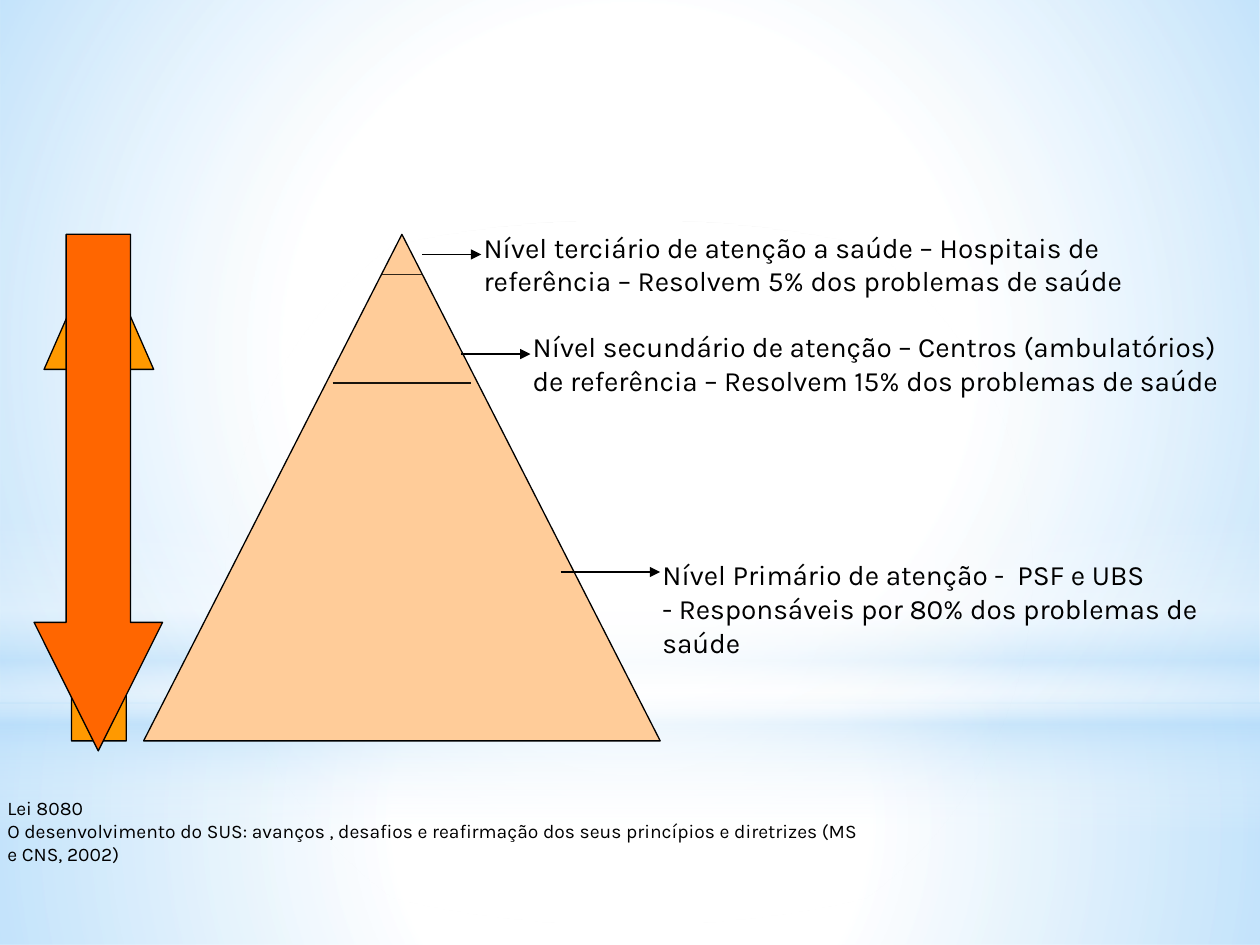
"""Build a slide on the three levels of care in the SUS health pyramid."""
from lxml.etree import SubElement
from pptx import Presentation
from pptx.dml.color import RGBColor
from pptx.enum.shapes import MSO_CONNECTOR, MSO_SHAPE as SHAPE
from pptx.enum.text import MSO_AUTO_SIZE
from pptx.oxml import parse_xml
from pptx.oxml.ns import nsdecls, qn
from pptx.util import Inches, Pt

COLS, ROWS = 100, 75
CELL = Inches(0.1)
FONT = "Karla"
WHITE = RGBColor(0xFF, 0xFF, 0xFF)
BLACK = RGBColor(0x00, 0x00, 0x00)
SKY = RGBColor(0xB4, 0xDC, 0xFA)
PEACH = RGBColor(0xFF, 0xCC, 0x99)
AMBER = RGBColor(0xFF, 0x99, 0x00)
ORANGE = RGBColor(0xFF, 0x66, 0x00)
BROWN = RGBColor(0x31, 0x26, 0x19)
DARK_BROWN = RGBColor(0x18, 0x13, 0x0C)

RADIAL = ('<a:path path="circle"><a:fillToRect l="50000" t="50000" '
          'r="50000" b="50000"/></a:path>')
VERTICAL = '<a:lin ang="5400000" scaled="0"/>'

BACKDROP = [
    (SHAPE.RECTANGLE, (0, 55.8, COLS, 19.2), RADIAL,
     [(0, WHITE, 91), (37, WHITE, 76), (100, SKY, 79)]),
    (SHAPE.RECTANGLE, (0, 0, COLS, 55.8), RADIAL,
     [(0, WHITE, 89), (48, WHITE, 62), (100, SKY, 79)]),
    (SHAPE.RECTANGLE, (0, 41.2, COLS, 25), VERTICAL,
     [(0, WHITE, 0), (29, WHITE, 30), (45, SKY, 40),
      (55, WHITE, 26), (65, SKY, 60), (100, WHITE, 0)]),
    (SHAPE.OVAL, (0, 17.5, COLS, 55.8), RADIAL,
     [(0, WHITE, 100), (56, WHITE, 0)]),
]
DIVIDERS = [(30.3, 33.5, 21.8, BROWN), (26.4, 37.4, 30.4, DARK_BROWN)]
LEVELS = [
    ((33.5, 38.2, 20.2), (37.4, 17.8, 57.5, 6.4),
     ["Nível terciário de atenção a saúde – Hospitais de referência – "
      "Resolvem 5% dos problemas de saúde"]),
    ((36.6, 42.1, 28.1), (41.3, 25.7, 56.7, 6.4),
     ["Nível secundário de atenção – Centros (ambulatórios) de referência – "
      "Resolvem 15% dos problemas de saúde"]),
    ((44.5, 52.4, 45.4), (51.6, 43.8, 48.4, 6.4),
     ["Nível Primário de atenção -  PSF e UBS",
      "- Responsáveis por 80% dos problemas de saúde"]),
]
SOURCES = ["Lei 8080",
           "O desenvolvimento do SUS: avanços , desafios e reafirmação dos "
           "seus princípios e diretrizes (MS e CNS, 2002)"]


def grid(*cells):
    """Turn grid columns and rows into slide lengths."""
    return [round(n * CELL) for n in cells]


def add_glow(slide, kind, box, direction, stops):
    """Add a borderless shape with a translucent gradient."""
    sp = slide.shapes.add_shape(kind, *grid(*box))
    sp.shadow.inherit = False
    sp.line.fill.background()
    sp.fill.background()
    gs = "".join(
        f'<a:gs pos="{pos * 1000}"><a:srgbClr val="{color}">'
        f'<a:alpha val="{alpha * 1000}"/></a:srgbClr></a:gs>'
        for pos, color, alpha in stops)
    gradient = parse_xml(f'<a:gradFill {nsdecls("a")} rotWithShape="1">'
                         f'<a:gsLst>{gs}</a:gsLst>{direction}</a:gradFill>')
    props = sp._element.spPr
    props.replace(props.find(qn("a:noFill")), gradient)


def add_solid(slide, kind, box, color, adjustments):
    """Add a filled shape with a thin black outline."""
    sp = slide.shapes.add_shape(kind, *grid(*box))
    sp.shadow.inherit = False
    sp.fill.solid()
    sp.fill.fore_color.rgb = color
    sp.line.color.rgb = BLACK
    sp.line.width = Pt(0.75)
    for i, value in enumerate(adjustments):
        sp.adjustments[i] = value


def add_rule(slide, left, right, y, color, arrow=False):
    """Add a horizontal line, with an arrowhead on request."""
    line = slide.shapes.add_connector(MSO_CONNECTOR.STRAIGHT,
                                      *grid(left, y, right, y))
    line.line.color.rgb = color
    line.line.width = Pt(0.75)
    if arrow:
        SubElement(line.line._get_or_add_ln(), qn("a:tailEnd"), type="triangle")
    SubElement(line._element.spPr, qn("a:effectLst"))


def add_text(slide, box, lines, size):
    """Add a wrapping text box with one paragraph per line."""
    tf = slide.shapes.add_textbox(*grid(*box)).text_frame
    tf.word_wrap = True
    tf.auto_size = MSO_AUTO_SIZE.SHAPE_TO_FIT_TEXT
    tf.text = "\n".join(lines)
    for p in tf.paragraphs:
        p.font.name = FONT
        p.font.size = Pt(size)
        p.font.color.rgb = BLACK


def main():
    """Build and save the slide."""
    prs = Presentation()
    prs.slide_width, prs.slide_height = grid(COLS, ROWS)
    slide = prs.slides.add_slide(prs.slide_layouts[6])
    slide.background.fill.solid()
    slide.background.fill.fore_color.rgb = WHITE
    for glow in BACKDROP:
        add_glow(slide, *glow)
    add_solid(slide, SHAPE.ISOSCELES_TRIANGLE, (11.4, 18.6, 41, 40.2), PEACH, [0.5])
    for divider in DIVIDERS:
        add_rule(slide, *divider)
    for pointer, box, lines in LEVELS:
        add_rule(slide, *pointer, BLACK, arrow=True)
        add_text(slide, box, lines, 16)
    add_solid(slide, SHAPE.UP_ARROW, (3.5, 19.4, 8.7, 39.4), AMBER, [0.5, 1.14])
    add_solid(slide, SHAPE.DOWN_ARROW, (2.7, 18.6, 10.2, 41), ORANGE, [0.5, 1])
    add_text(slide, (-0.4, 62.7, 70.6, 4.7), SOURCES, 11)
    prs.save("out.pptx")


if __name__ == "__main__":
    main()
